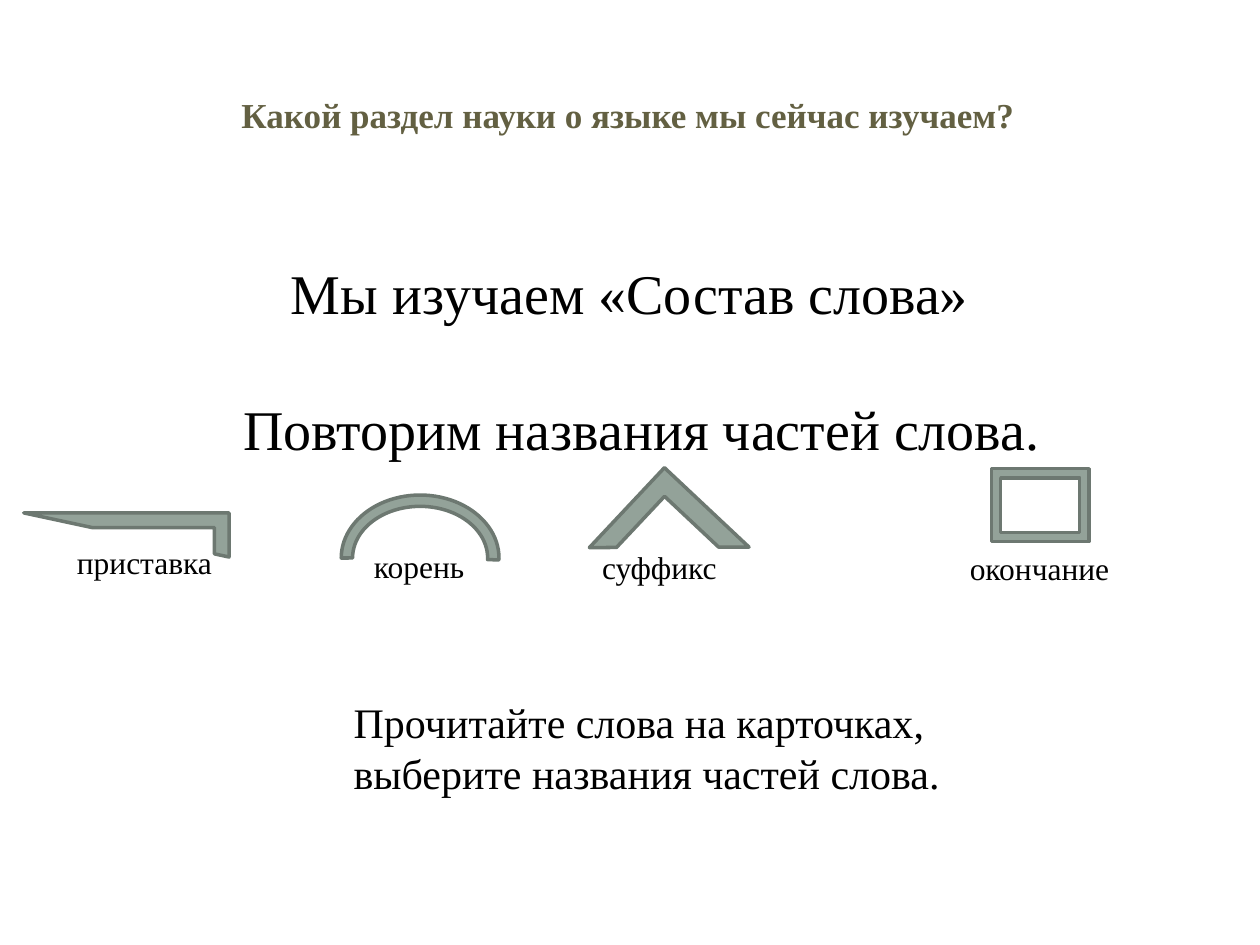
from pptx import Presentation
from pptx.dml.color import RGBColor
from pptx.enum.shapes import MSO_SHAPE
from pptx.enum.text import MSO_ANCHOR, PP_ALIGN
from pptx.util import Cm, Pt

FONT = "Times New Roman"
BLACK, OLIVE, SAGE, DARK_SAGE = "000000", "636042", "93A299", "6D7871"


def color(hex_string):
    return RGBColor.from_string(hex_string)


def add_text(slide, box, text, size, hex_string=BLACK, bold=False,
             alignment=PP_ALIGN.LEFT, wrap=True, line_spacing=1.0):
    """Add one paragraph in a box of (left, top, width, height) in centimetres."""
    text_box = slide.shapes.add_textbox(*map(Cm, box))
    frame = text_box.text_frame
    frame.word_wrap = wrap
    paragraph = frame.paragraphs[0]
    paragraph.alignment = alignment
    paragraph.line_spacing = line_spacing
    run = paragraph.add_run()
    run.text = text
    run.font.name = FONT
    run.font.size = Pt(size)
    run.font.bold = bold
    run.font.color.rgb = color(hex_string)
    return frame


def add_question(slide, box):
    frame = add_text(slide, box, "Какой раздел науки о языке мы сейчас изучаем?", 20,
                     OLIVE, True, PP_ALIGN.CENTER, line_spacing=1.15)
    frame.vertical_anchor = MSO_ANCHOR.MIDDLE
    frame.margin_bottom = Cm(0.8)


def add_word_part(slide, box, label, label_offset, label_width, preset,
                  adjustments=(), rotation=0, mirrored=False):
    """Draw the sign of a word part in the box; its label is offset from the box corner."""
    left, top, width, height = box
    offset_x, offset_y = label_offset
    add_text(slide, (left + offset_x, top + offset_y, label_width, 1.02), label, 18, wrap=False)

    sign = slide.shapes.add_shape(preset, *map(Cm, box))
    sign.shadow.inherit = False
    sign.fill.solid()
    sign.fill.fore_color.rgb = color(SAGE)
    sign.line.color.rgb = color(DARK_SAGE)
    sign.line.width = Pt(2)
    sign.rotation = rotation
    for index, value in enumerate(adjustments):
        sign.adjustments[index] = value
    if mirrored:
        sign._element.spPr.xfrm.set("flipH", "1")


def add_word_parts(slide, left, top):
    """Place the four signs relative to the corner of their row."""
    parts = [
        ((0, 0.89, 4.14, 0.89), "приставка", (0.82, 0.48), 3.28,
         MSO_SHAPE.HALF_FRAME, (), 0, True),
        ((6.4, 0.53, 3.18, 2.54), "корень", (0.41, 0.92), 2.36,
         MSO_SHAPE.BLOCK_ARC, (108, 0.83, 0.09)),
        ((11.84, 0.48, 2.34, 2.21), "суффикс", (-0.43, 0.99), 2.84,
         MSO_SHAPE.HALF_FRAME, (0.19, 0.18), 43.2),
        ((19.51, 0, 1.96, 1.47), "окончание", (-0.69, 1.5), 3.35, MSO_SHAPE.FRAME),
    ]
    for (x, y, width, height), *details in parts:
        add_word_part(slide, (left + x, top + y, width, height), *details)


def main():
    presentation = Presentation()
    presentation.slide_width = Cm(25.4)
    presentation.slide_height = Cm(19.05)
    slide = presentation.slides.add_slide(presentation.slide_layouts[6])

    add_question(slide, (1.19, 1.14, 22.94, 2.9))
    add_text(slide, (1.27, 4.88, 22.86, 2.26), "Мы изучаем «Состав слова»", 32,
             alignment=PP_ALIGN.CENTER, line_spacing=1.15)
    add_text(slide, (4.65, 7.82, 16.74, 1.63), "Повторим названия частей слова.", 32, wrap=False)
    add_word_parts(slide, 0.48, 9.45)
    add_text(slide, (6.88, 13.92, 12.7, 2.31),
             "Прочитайте слова на карточках, выберите названия частей слова.", 24)

    presentation.save("out.pptx")


if __name__ == "__main__":
    main()
